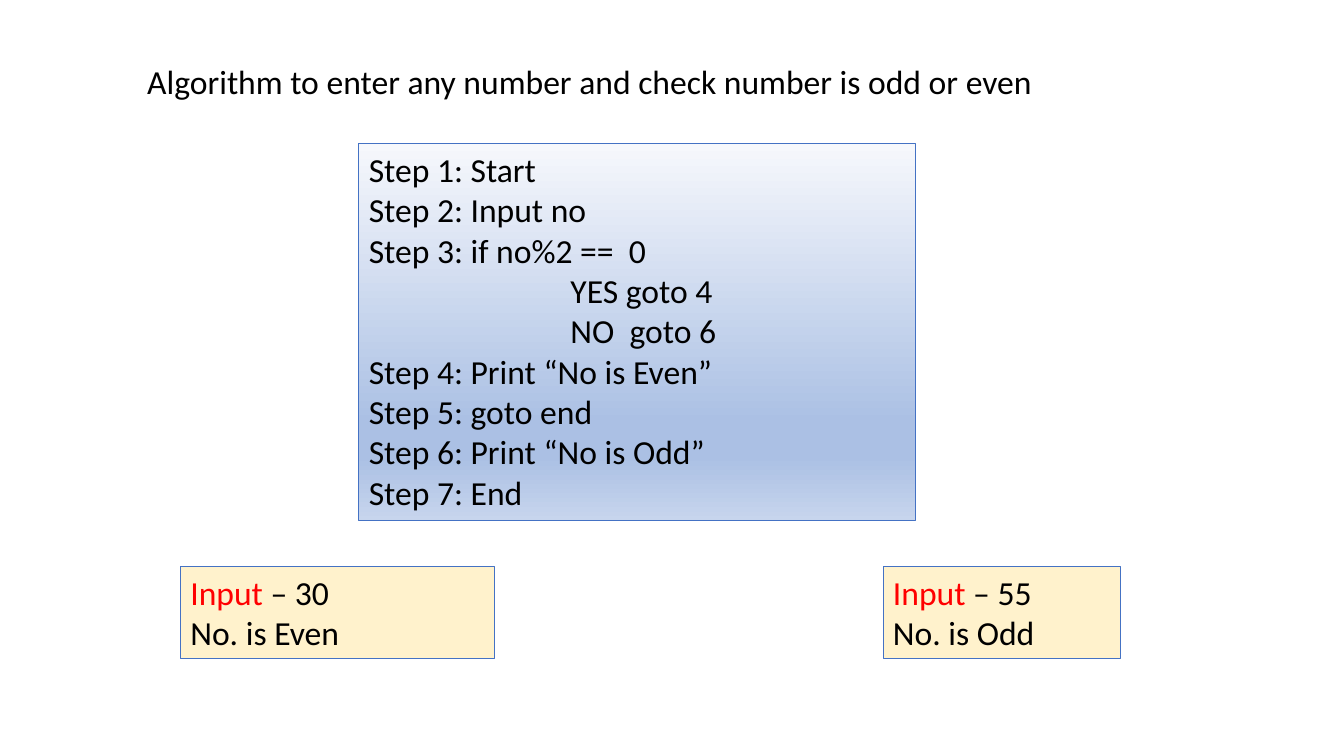
from copy import deepcopy

from pptx import Presentation
from pptx.dml.color import RGBColor
from pptx.enum.shapes import MSO_SHAPE as Preset
from pptx.enum.text import MSO_ANCHOR as Anchor, PP_ALIGN as Align
from pptx.oxml.ns import qn
from pptx.util import Inches, Pt

BLACK = RGBColor(0x00, 0x00, 0x00)
RED = RGBColor(0xFF, 0x00, 0x00)
BLUE = RGBColor(0x44, 0x72, 0xC4)
CREAM = RGBColor(0xFF, 0xF2, 0xCC)
PALE_BLUE = RGBColor(0xF6, 0xF8, 0xFC)
MID_BLUE = RGBColor(0xAB, 0xC0, 0xE4)
LIGHT_BLUE = RGBColor(0xC7, 0xD5, 0xED)

STEP_GRADIENT = [(0, PALE_BLUE), (0.74, MID_BLUE), (0.83, MID_BLUE), (1, LIGHT_BLUE)]
STEPS = [
    ("Step 1: Start", 0),
    ("Step 2: Input no", 0),
    ("Step 3: if no%2 ==  0", 0),
    ("YES goto 4", 2),
    ("NO  goto 6", 2),
    ("Step 4: Print “No is Even”", 0),
    ("Step 5: goto end", 0),
    ("Step 6: Print “No is Odd”", 0),
    ("Step 7: End", 0),
]
EXAMPLES = [(5.37, 9.36, "30", "Even"), (26.28, 7.08, "55", "Odd")]


class SlideBuilder:
    COLUMNS, ROWS = 40, 20
    FONT = {"name": "Calibri", "size": Pt(24), "bold": False}
    FRAME = {
        "word_wrap": True,
        "vertical_anchor": Anchor.TOP,
        "margin_left": Inches(0.1),
        "margin_right": Inches(0.1),
        "margin_top": Inches(0.05),
        "margin_bottom": Inches(0.05),
    }

    def __init__(self, presentation):
        self.column = presentation.slide_width / self.COLUMNS
        self.row = presentation.slide_height / self.ROWS
        self.slide = presentation.slides.add_slide(presentation.slide_layouts[5])

    def place(self, column, row, columns, rows):
        return (int(column * self.column), int(row * self.row),
                int(columns * self.column), int(rows * self.row))

    def apply(self, target, values):
        for name, value in values.items():
            setattr(target, name, value)

    def fill_text(self, shape, lines):
        frame = shape.text_frame
        self.apply(frame, self.FRAME)
        for index, (runs, indent) in enumerate(lines):
            paragraph = frame.add_paragraph() if index else frame.paragraphs[0]
            paragraph.alignment = Align.LEFT
            if indent:
                paragraph._p.get_or_add_pPr().set("marL", str(Inches(indent)))
            for text, color in runs:
                run = paragraph.add_run()
                run.text = text
                self.apply(run.font, self.FONT)
                run.font.color.rgb = color

    def title(self, text, *area):
        shape = self.slide.shapes.title
        self.apply(shape, dict(zip(("left", "top", "width", "height"), self.place(*area))))
        self.fill_text(shape, [([(text, BLACK)], 0)])

    def box(self, lines, *area):
        shape = self.slide.shapes.add_shape(Preset.RECTANGLE, *self.place(*area))
        shape.shadow.inherit = False
        shape.fill.solid()
        shape.fill.fore_color.rgb = CREAM
        shape.line.color.rgb = BLUE
        shape.line.width = Pt(0.75)
        self.fill_text(shape, lines)
        return shape

    def gradient(self, shape, stops):
        fill = shape.fill
        fill.gradient()
        fill.gradient_angle = 270
        stop_list = next(shape._element.iter(qn("a:gsLst")))
        while len(stop_list) < len(stops):
            stop_list.append(deepcopy(stop_list[0]))
        for stop, (position, color) in zip(fill.gradient_stops, stops):
            stop.position = position
            stop.color.rgb = color


def main():
    presentation = Presentation()
    presentation.slide_width = Inches(13.33)
    presentation.slide_height = Inches(7.5)
    builder = SlideBuilder(presentation)

    builder.title("Algorithm to enter any number and check number is odd or even",
                  4.08, 1.49, 30.63, 1.33)
    steps = builder.box([([(text, BLACK)], indent) for text, indent in STEPS],
                        10.68, 3.81, 16.56, 9.97)
    builder.gradient(steps, STEP_GRADIENT)
    for column, columns, number, parity in EXAMPLES:
        lines = [
            ([("Input", RED), (f" – {number}", BLACK)], 0),
            ([(f"No. is {parity}", BLACK)], 0),
        ]
        builder.box(lines, column, 14.99, columns, 2.43)

    presentation.save("out.pptx")


if __name__ == "__main__":
    main()
